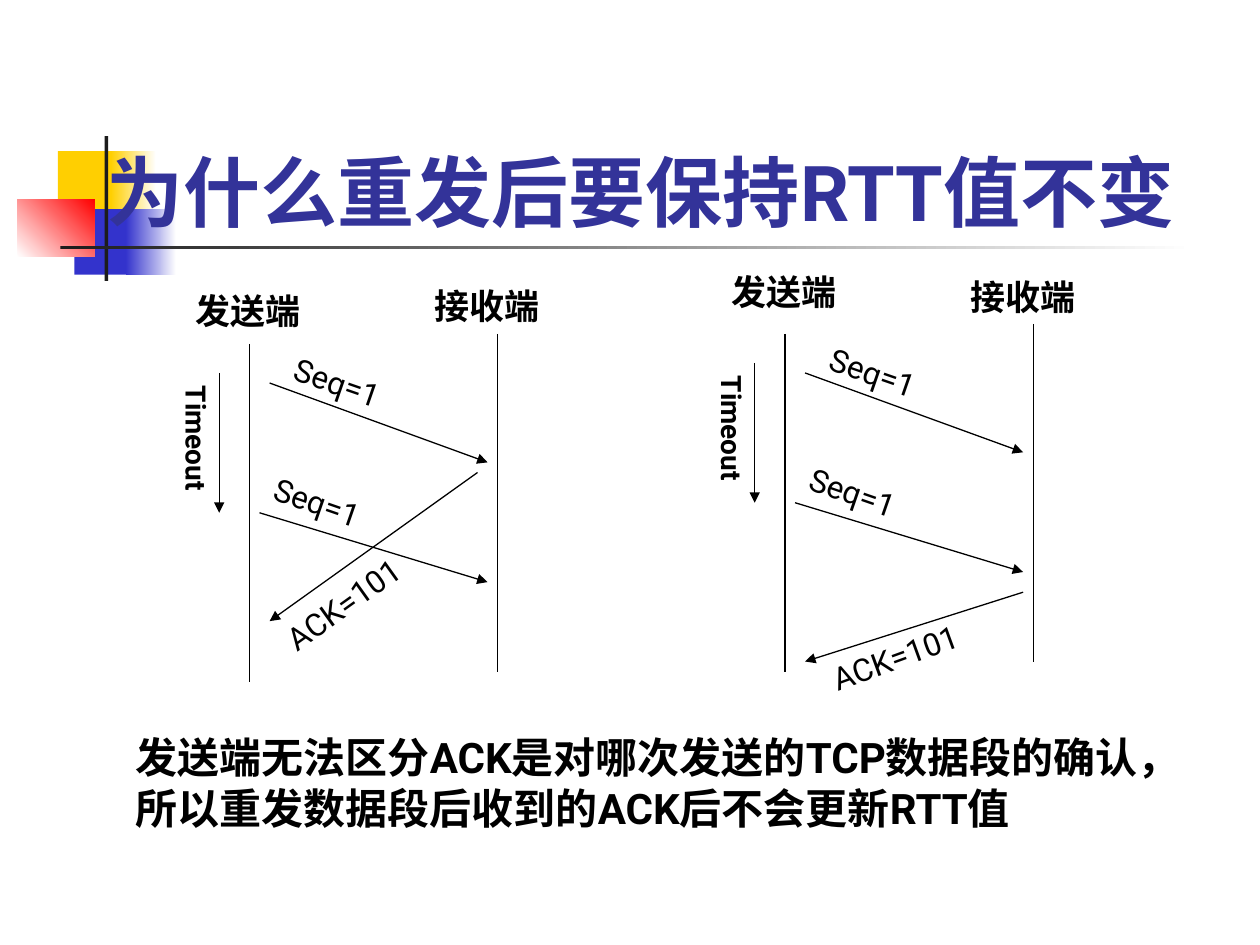
import pptx
import pptx.dml.color
import pptx.enum.dml
import pptx.enum.shapes
import pptx.enum.text
import pptx.util
import pptx.oxml.ns
import lxml.etree

Inches = pptx.util.Inches
COLORS = {
    "ink": "000000",
    "title": "333399",
    "yellow": "FFCF01",
    "blue": "3333CC",
    "red": "FF0000",
    "dark": "1C1C1C",
    "white": "FFFFFF",
}


def rgb(name):
    return pptx.dml.color.RGBColor.from_string(COLORS[name])


class SlideBuilder:
    font = "Roboto"
    line_width = 0.75

    def __init__(self, slide):
        self.slide = slide

    def bar(self, x, y, w, h, start, end=None, angle=0):
        """Rectangle with a plain fill, or a gradient when end is given."""
        sp = self.slide.shapes.add_shape(
            pptx.enum.shapes.MSO_SHAPE.RECTANGLE,
            Inches(x), Inches(y), Inches(w), Inches(h))
        sp.shadow.inherit = False
        sp.line.fill.background()
        if end is None:
            sp.fill.solid()
            sp.fill.fore_color.rgb = rgb(start)
            return
        sp.fill.gradient()
        sp.fill.gradient_angle = angle
        for stop, color, pos in zip(sp.fill.gradient_stops, (start, end), (0, 1)):
            stop.color.rgb = rgb(color)
            stop.position = pos

    def text(self, x, y, w, h, words, size, bold=False, color="ink",
             rotation=0, anchor="TOP"):
        sp = self.slide.shapes.add_textbox(
            Inches(x), Inches(y), Inches(w), Inches(h))
        sp.rotation = rotation
        tf = sp.text_frame
        tf.word_wrap = True
        tf.vertical_anchor = pptx.enum.text.MSO_ANCHOR[anchor]
        r = tf.paragraphs[0].add_run()
        r.text = words
        style = {"name": self.font, "size": pptx.util.Pt(size), "bold": bold}
        for key, value in style.items():
            setattr(r.font, key, value)
        r.font.color.rgb = rgb(color)

    def line(self, x1, y1, x2, y2, arrow=False):
        cn = self.slide.shapes.add_connector(
            pptx.enum.shapes.MSO_CONNECTOR.STRAIGHT,
            Inches(x1), Inches(y1), Inches(x2), Inches(y2))
        cn.line.color.rgb = rgb("ink")
        cn.line.width = pptx.util.Pt(self.line_width)
        qn = pptx.oxml.ns.qn
        if arrow:
            lxml.etree.SubElement(cn.line._get_or_add_ln(), qn("a:tailEnd"),
                                  type="triangle")
        lxml.etree.SubElement(cn._element.spPr, qn("a:effectLst"))

    def exchange(self, dx, dy, ack, ack_label, ack_angle):
        """Sender and receiver lifelines, a retransmission and its ACK."""
        # Lifelines
        for x, y in ((1.98, 2.73), (3.95, 2.65)):
            self.line(x + dx, y + dy, x + dx, y + dy + 2.68)

        # Timeout span
        self.line(1.74 + dx, 2.96 + dy, 1.74 + dx, 4.07 + dy, arrow=True)
        self.text(0.93 + dx, 3.41 + dy, 1.26, 0.37, "Timeout", 16,
                  bold=True, rotation=90)

        # First segment and its retransmission
        segments = (((2.14, 3.04, 3.87, 3.67), (2.22, 2.88)),
                    ((2.06, 4.07, 3.87, 4.62), (2.06, 3.83)))
        for (x1, y1, x2, y2), (x, y) in segments:
            self.line(x1 + dx, y1 + dy, x2 + dx, y2 + dy, arrow=True)
            self.text(x + dx, y + dy, 1.18, 0.4, "Seq=1", 18, rotation=19.1)

        # Acknowledgement
        self.line(*ack, arrow=True)
        self.text(*ack_label, 1.73, 0.4, "ACK=101", 18, rotation=ack_angle)


def main():
    prs = pptx.Presentation()
    prs.slide_width, prs.slide_height = Inches(10), Inches(7.5)
    s = SlideBuilder(prs.slides.add_slide(prs.slide_layouts[6]))

    # Corner decoration and title rule
    s.bar(0.46, 1.2, 0.48, 0.52, "yellow")
    s.bar(0.88, 1.2, 0.36, 0.52, "yellow", "white")
    s.bar(0.59, 1.66, 0.46, 0.52, "blue")
    s.bar(1, 1.66, 0.4, 0.52, "blue", "white")
    s.bar(0.14, 1.58, 0.61, 0.46, "white", "red", angle=45)
    s.bar(0.83, 1.08, 0.03, 1.15, "dark")
    s.bar(0.48, 1.95, 9, 0.03, "dark", "white")

    # Title
    s.text(0.75, 0.68, 9.03, 1.25, "为什么重发后要保持RTT值不变", 44,
           bold=True, color="title", anchor="BOTTOM")

    # ACK for the first segment, then ACK for the retransmission
    s.exchange(0, 0, (3.79, 3.75, 2.14, 4.93), (2.06, 4.45), 324.4)
    s.exchange(4.25, -0.08, (8.12, 4.7, 6.39, 5.25), (6.47, 4.93), 339.9)

    # Conclusion
    s.text(0.98, 5.76, 8.43, 0.9,
           "发送端无法区分ACK是对哪次发送的TCP数据段的确认，"
           "所以重发数据段后收到的ACK后不会更新RTT值", 24, bold=True)

    # Names of the two ends
    for x, y, name in ((1.45, 2.25, "发送端"), (3.35, 2.21, "接收端"),
                       (5.71, 2.1, "发送端"), (7.6, 2.14, "接收端")):
        s.text(x, y, 1.18, 0.43, name, 20, bold=True)

    prs.save("out.pptx")


if __name__ == "__main__":
    main()
